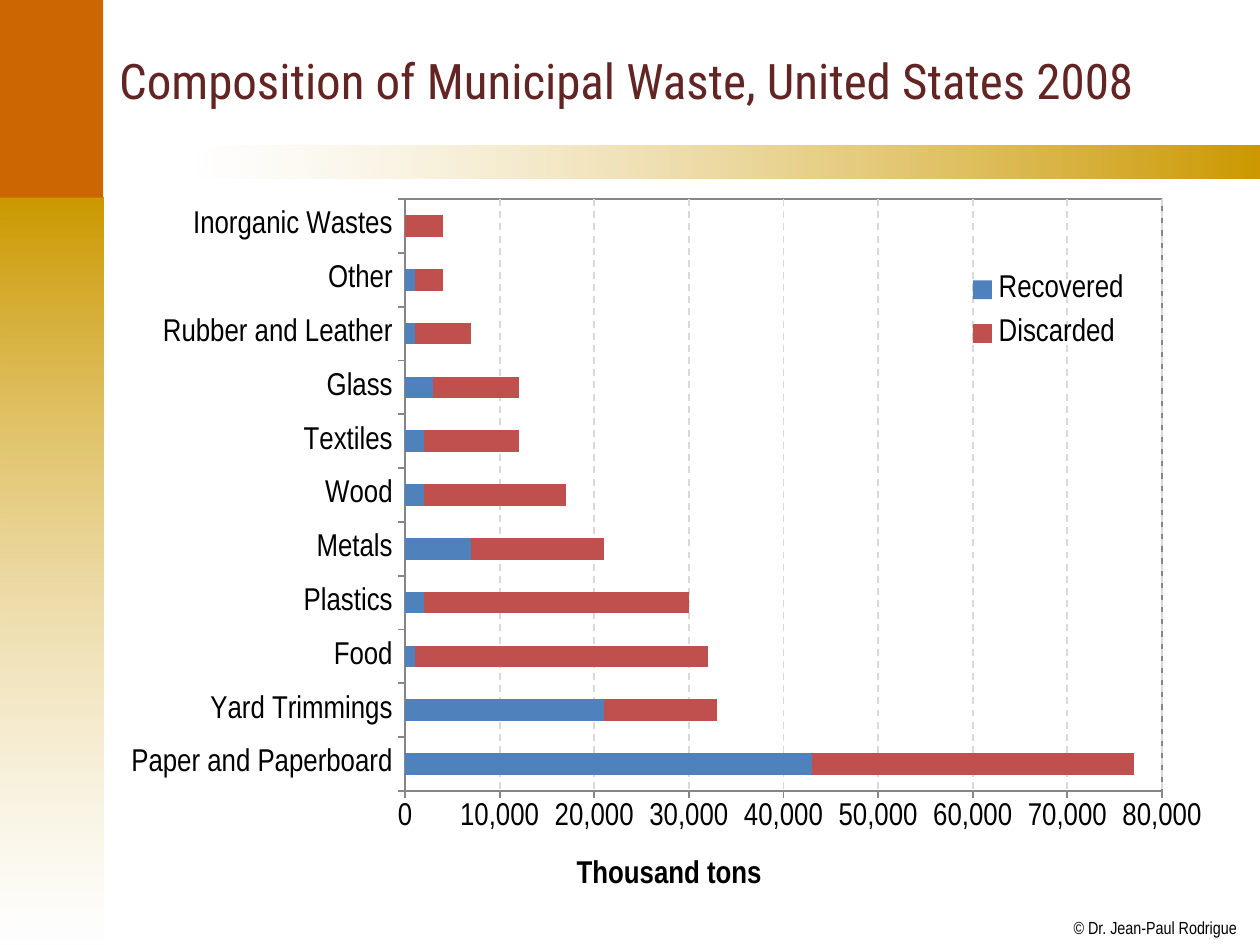
import pptx
import pptx.chart.data
import pptx.dml.color
import pptx.enum.chart
import pptx.enum.dml
import pptx.enum.shapes
import pptx.enum.text
import pptx.oxml
import pptx.oxml.ns
import pptx.util
from lxml import etree

Pt = pptx.util.Pt
qn = pptx.oxml.ns.qn

TITLE = "Composition of Municipal Waste, United States 2008"
CREDIT = "© Dr. Jean-Paul Rodrigue"
AXIS_TITLE = "Thousand tons"
# category, recovered, discarded
WASTE = [
    ("Paper and Paperboard", 43000, 34000),
    ("Yard Trimmings", 21000, 12000),
    ("Food", 1000, 31000),
    ("Plastics", 2000, 28000),
    ("Metals", 7000, 14000),
    ("Wood", 2000, 15000),
    ("Textiles", 2000, 10000),
    ("Glass", 3000, 9000),
    ("Rubber and Leather", 1000, 6000),
    ("Other", 1000, 3000),
    ("Inorganic Wastes", 0, 4000),
]
SERIES = [("Recovered", "4F81BD"), ("Discarded", "C0504D")]
LABEL_FONT = "Arial Narrow"
TITLE_FONT = "Roboto Condensed"
AXIS_GREY = "868686"

WIDTH, HEIGHT = 720, 540
BAND_RIGHT = 59
BAND_SPLIT = 113


def rgb(value):
    return pptx.dml.color.RGBColor.from_string(value)


def style_font(font, size, name, color="000000", bold=False):
    font.size = Pt(size)
    font.name = name
    font.bold = bold
    font.color.rgb = rgb(color)


def add_text(page, text, left, top, width, height, *, size, font, color="000000",
             inset=(0, 0), wrap=False, anchor="TOP"):
    box = page.shapes.add_textbox(Pt(left), Pt(top), Pt(width), Pt(height))
    frame = box.text_frame
    frame.word_wrap = wrap
    frame.vertical_anchor = getattr(pptx.enum.text.MSO_ANCHOR, anchor)
    frame.margin_left = frame.margin_right = Pt(inset[0])
    frame.margin_top = frame.margin_bottom = Pt(inset[1])
    span = frame.paragraphs[0].add_run()
    span.text = text
    style_font(span.font, size, font, color)


def add_band(page, left, top, width, height, stops, angle=0):
    """Rectangle filled with one colour, or a gradient of two (colour, opacity) stops."""
    band = page.shapes.add_shape(pptx.enum.shapes.MSO_SHAPE.RECTANGLE,
                                 Pt(left), Pt(top), Pt(width), Pt(height))
    band.shadow.inherit = False
    band.line.fill.background()
    if len(stops) == 1:
        band.fill.solid()
        band.fill.fore_color.rgb = rgb(stops[0][0])
        return
    band.fill.gradient()
    band.fill.gradient_angle = angle
    for stop, (color, _) in zip(band.fill.gradient_stops, stops):
        stop.color.rgb = rgb(color)
    gradient = band._element.spPr.find(qn("a:gradFill"))
    for element, (_, opacity) in zip(gradient.iter(qn("a:srgbClr")), stops):
        if opacity < 100:
            etree.SubElement(element, qn("a:alpha")).set("val", str(opacity * 1000))


def set_layout(element, index, **fractions):
    """Place a chart part by fractions of the chart frame."""
    for old in element.findall(qn("c:layout")):
        element.remove(old)
    layout = etree.Element(qn("c:layout"))
    manual = etree.SubElement(layout, qn("c:manualLayout"))
    if "target" in fractions:
        etree.SubElement(manual, qn("c:layoutTarget")).set("val", fractions.pop("target"))
    for key in ("x", "y"):
        etree.SubElement(manual, qn(f"c:{key}Mode")).set("val", "edge")
    for key, value in fractions.items():
        etree.SubElement(manual, qn(f"c:{key}")).set("val", str(value))
    element.insert(index, layout)


def style_line(line, color, width):
    line.color.rgb = rgb(color)
    line.width = Pt(width)


def add_waste_chart(page):
    data = pptx.chart.data.CategoryChartData(number_format="#,##0")
    data.categories = [row[0] for row in WASTE]
    for column, (name, _) in enumerate(SERIES, start=1):
        data.add_series(name, [row[column] for row in WASTE])
    chart = page.shapes.add_chart(pptx.enum.chart.XL_CHART_TYPE.BAR_STACKED,
                                  Pt(60), Pt(103), Pt(649.5), Pt(417), data).chart
    chart.has_title = False
    style_font(chart.font, 18, LABEL_FONT)

    plot = chart.plots[0]
    plot.gap_width, plot.overlap = 150, 100
    plot.vary_by_categories = False
    for series, (_, color) in zip(plot.series, SERIES):
        series.format.fill.solid()
        series.format.fill.fore_color.rgb = rgb(color)

    categories, values = chart.category_axis, chart.value_axis
    for axis in (categories, values):
        axis.major_tick_mark = pptx.enum.chart.XL_TICK_MARK.OUTSIDE
        axis.minor_tick_mark = pptx.enum.chart.XL_TICK_MARK.NONE
        style_line(axis.format.line, AXIS_GREY, 1)
        style_font(axis.tick_labels.font, 18, LABEL_FONT)
    categories.has_major_gridlines = False
    values.minimum_scale, values.maximum_scale, values.major_unit = 0, 80000, 10000
    values.tick_labels.number_format = "#,##0"
    values.tick_labels.number_format_is_linked = False
    values.has_major_gridlines = True
    grid = values.major_gridlines.format.line
    style_line(grid, "D9D9D9", 1)
    grid.dash_style = pptx.enum.dml.MSO_LINE.DASH

    values.has_title = True
    frame = values.axis_title.text_frame
    frame.text = AXIS_TITLE
    style_font(frame.paragraphs[0].runs[0].font, 18, LABEL_FONT, bold=True)
    set_layout(values.axis_title._element, 1, x=0.41, y=0.92)

    chart.has_legend = True
    chart.legend.position = pptx.enum.chart.XL_LEGEND_POSITION.RIGHT
    chart.legend.include_in_layout = False
    style_font(chart.legend.font, 18, LABEL_FONT)
    set_layout(chart.legend._element, 1, x=0.74, y=0.11, w=0.18, h=0.14)

    area = chart._chartSpace.chart.plotArea
    set_layout(area, 0, target="inner", x=0.264, y=0.026, w=0.666, h=0.811)
    area.append(pptx.oxml.parse_xml(
        f'<c:spPr {pptx.oxml.ns.nsdecls("c", "a")}><a:noFill/><a:ln w="12700"><a:solidFill>'
        f'<a:srgbClr val="{AXIS_GREY}"/></a:solidFill></a:ln></c:spPr>'))


def main():
    deck = pptx.Presentation()
    deck.slide_width, deck.slide_height = Pt(WIDTH), Pt(HEIGHT)
    page = deck.slides.add_slide(deck.slide_layouts[6])

    add_band(page, 0, BAND_SPLIT, BAND_RIGHT, HEIGHT - BAND_SPLIT,
             [("CC9900", 100), ("FFFFFF", 51)], angle=270)
    add_band(page, BAND_SPLIT, 83, WIDTH - BAND_SPLIT, 19,
             [("FFFFFF", 50), ("CC9900", 100)])
    add_band(page, 0, 0, BAND_RIGHT, BAND_SPLIT, [("CC6600", 100)])
    add_text(page, CREDIT, 613.5, 524, 93.5, 12, size=10, font=LABEL_FONT)
    add_text(page, TITLE, 61, 8, 647, 75, size=28, font=TITLE_FONT, color="632523",
             inset=(7.2, 3.6), wrap=True, anchor="MIDDLE")
    add_waste_chart(page)
    deck.save("out.pptx")


if __name__ == "__main__":
    main()
